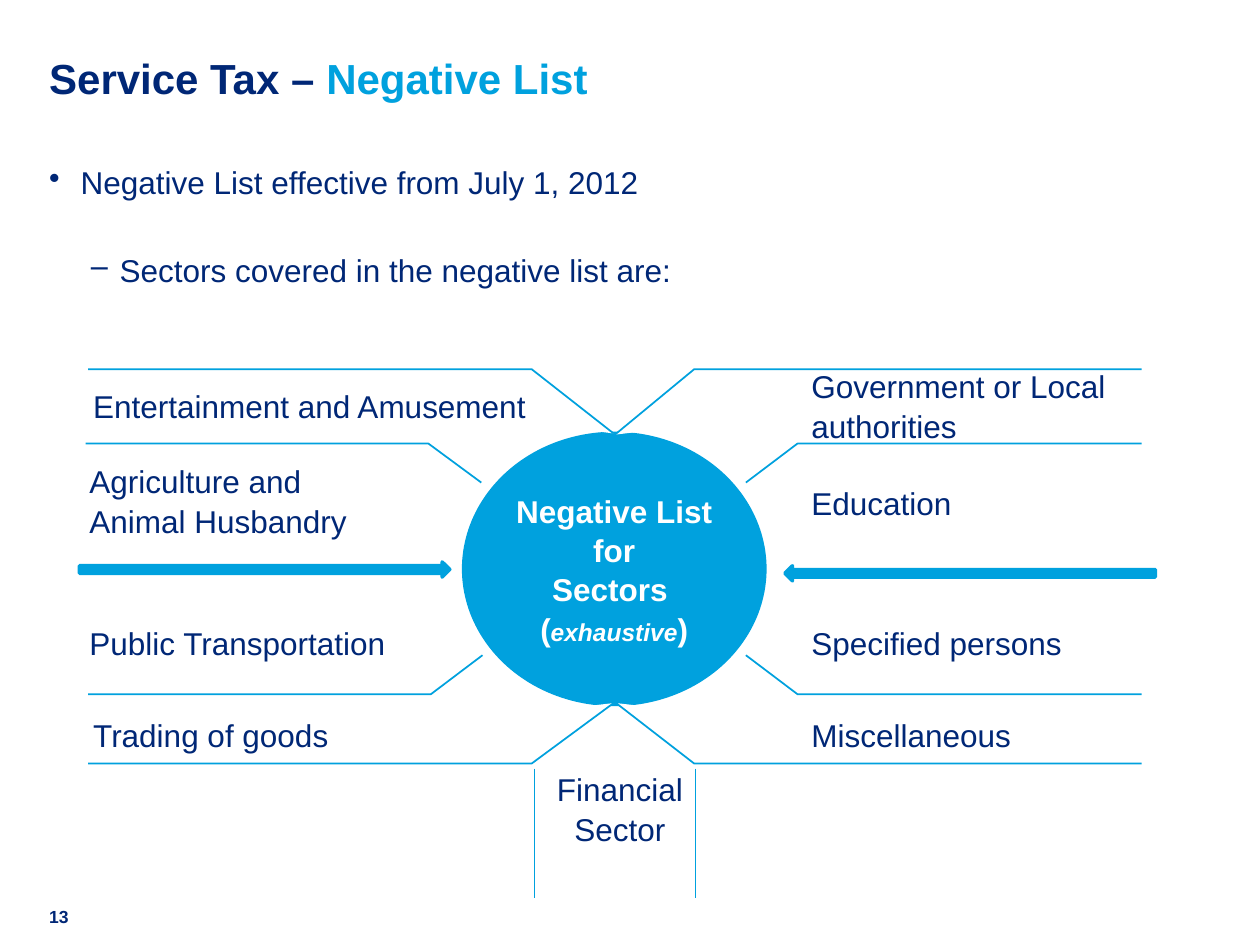
from lxml import etree
from pptx import Presentation
from pptx.dml.color import RGBColor
from pptx.enum.shapes import MSO_CONNECTOR, MSO_SHAPE
from pptx.enum.text import MSO_ANCHOR, PP_ALIGN
from pptx.oxml.ns import qn
from pptx.util import Inches, Pt

NAVY = RGBColor(0x00, 0x27, 0x76)
BLUE = RGBColor(0x00, 0xA1, 0xDE)
WHITE = RGBColor(0xFF, 0xFF, 0xFF)
LINE_SPACING = 1.06


def style(p, size=18, color=NAVY, bold=False, spacing=LINE_SPACING, align=PP_ALIGN.LEFT):
    p.font.name = "Arial"
    p.font.size = Pt(size)
    p.font.bold = bold
    p.font.color.rgb = color
    p.line_spacing = spacing
    p.alignment = align


def add_text(s, box, anchor=MSO_ANCHOR.TOP):
    """Add a wrapping text box without margins and return its text frame."""
    tf = s.shapes.add_textbox(*(Inches(v) for v in box)).text_frame
    tf.word_wrap = True
    tf.vertical_anchor = anchor
    tf.margin_left = tf.margin_top = tf.margin_right = tf.margin_bottom = 0
    return tf


prs = Presentation()
prs.slide_width, prs.slide_height = Inches(10), Inches(7.5)
s = prs.slides.add_slide(prs.slide_layouts[5])

# Title
title = s.shapes.title
title.left, title.top, title.width, title.height = (
    Inches(v) for v in (0.39, 0.39, 9.21, 0.69))
tf = title.text_frame
tf.margin_left = tf.margin_top = tf.margin_right = tf.margin_bottom = 0
tf.vertical_anchor = MSO_ANCHOR.TOP
p = tf.paragraphs[0]
style(p, 24, bold=True)
p.add_run().text = "Service Tax – "
r = p.add_run()
r.text = "Negative List"
r.font.color.rgb = BLUE

# Bulleted introduction
tf = add_text(s, (0.39, 1.28, 9.21, 1.2))
bullets = [
    ("Negative List effective from July 1, 2012", "•", 0, 0.25, 0.25, 0),
    ("Sectors covered in the negative list are:", "‒", 1, 0.56, 0.24, 24),
]
for i, (text, mark, level, indent, hanging, before) in enumerate(bullets):
    p = tf.add_paragraph() if i else tf.paragraphs[0]
    p.text = text
    p.level = level
    style(p)
    p.space_before, p.space_after = Pt(before), Pt(3)
    pPr = p._p.get_or_add_pPr()
    pPr.set("marL", str(Inches(indent)))
    pPr.set("indent", str(-Inches(hanging)))
    bullet = etree.Element(qn("a:buChar"), char=mark)
    pPr.find(qn("a:spcAft")).addnext(bullet)

# Central ellipse
hub = s.shapes.add_shape(
    MSO_SHAPE.OVAL, Inches(3.68), Inches(3.44), Inches(2.39), Inches(2.15))
hub.shadow.inherit = False
hub.fill.solid()
hub.fill.fore_color.rgb = BLUE
hub.line.color.rgb = BLUE
hub.line.width = Pt(2)
tf = hub.text_frame
tf.vertical_anchor = MSO_ANCHOR.MIDDLE
tf.margin_left = tf.margin_top = tf.margin_right = tf.margin_bottom = Inches(0.04)
tf.text = "Negative List\nfor\nSectors \n("
for p in tf.paragraphs:
    style(p, color=WHITE, bold=True, spacing=1.04, align=PP_ALIGN.CENTER)
r = p.add_run()
r.text = "exhaustive"
r.font.size = Pt(14)
r.font.italic = True
p.add_run().text = ")"

# Bent leaders: hub point, bend and outer end (the last two share a height)
leaders = [
    (3.82, 3.83, 3.40, 0.68, 3.52),
    (4.87, 3.44, 4.22, 0.70, 2.93),
    (4.87, 5.58, 4.22, 0.70, 6.06),
    (3.83, 5.20, 3.42, 0.70, 5.51),
    (4.88, 3.45, 5.51, 9.06, 2.93),
    (5.92, 3.83, 6.33, 9.06, 3.52),
    (4.89, 5.58, 5.51, 9.06, 6.06),
    (5.92, 5.20, 6.33, 9.06, 5.51),
]
for hub_x, hub_y, bend_x, end_x, y in leaders:
    builder = s.shapes.build_freeform(Inches(hub_x), Inches(hub_y))
    builder.add_line_segments(
        [(Inches(bend_x), Inches(y)), (Inches(end_x), Inches(y))], close=False)
    sp = builder.convert_to_shape()
    sp.shadow.inherit = False
    sp.fill.solid()
    sp.fill.fore_color.rgb = WHITE
    sp.line.color.rgb = BLUE
    sp.line.width = Pt(1)

# Sector labels
sectors = [
    ("Entertainment and Amusement", 0.74, 3.05, 3.5, 0.32),
    ("Government or Local authorities", 6.44, 2.89, 2.56, 0.64),
    ("Agriculture and Animal Husbandry", 0.71, 3.65, 2.33, 0.64),
    ("Education", 6.44, 3.82, 2.33, 0.32),
    ("Financial Sector", 4.32, 6.09, 1.2, 0.64),
    ("Public Transportation", 0.71, 4.93, 2.78, 0.32),
    ("Specified persons", 6.44, 4.93, 2.33, 0.32),
    ("Trading of goods", 0.74, 5.66, 2.33, 0.32),
    ("Miscellaneous", 6.44, 5.66, 2.33, 0.32),
]
for text, *box in sectors:
    p = add_text(s, box, MSO_ANCHOR.MIDDLE).paragraphs[0]
    p.text = text
    style(p, align=PP_ALIGN.CENTER if text == "Financial Sector" else PP_ALIGN.LEFT)

# Page number
p = add_text(s, (0.39, 7.19, 0.39, 0.13)).paragraphs[0]
p.text = "13"
style(p, 10, bold=True, spacing=1.0)

# Sides of the bottom sector
for x in (4.24, 5.52):
    side = s.shapes.add_connector(
        MSO_CONNECTOR.STRAIGHT, Inches(x), Inches(6.1), Inches(x), Inches(7.13))
    side.line.color.rgb = BLUE
    side.line.width = Pt(0.75)
    etree.SubElement(side._element.spPr, qn("a:effectLst"))

# Arrows pointing at the hub
for kind, x, y in ((MSO_SHAPE.RIGHT_ARROW, 0.63, 4.46), (MSO_SHAPE.LEFT_ARROW, 6.23, 4.49)):
    arrow = s.shapes.add_shape(kind, Inches(x), Inches(y), Inches(2.94), Inches(0.12))
    arrow.shadow.inherit = False
    arrow.fill.solid()
    arrow.fill.fore_color.rgb = BLUE
    arrow.line.color.rgb = BLUE
    arrow.line.width = Pt(2)

prs.save("out.pptx")
